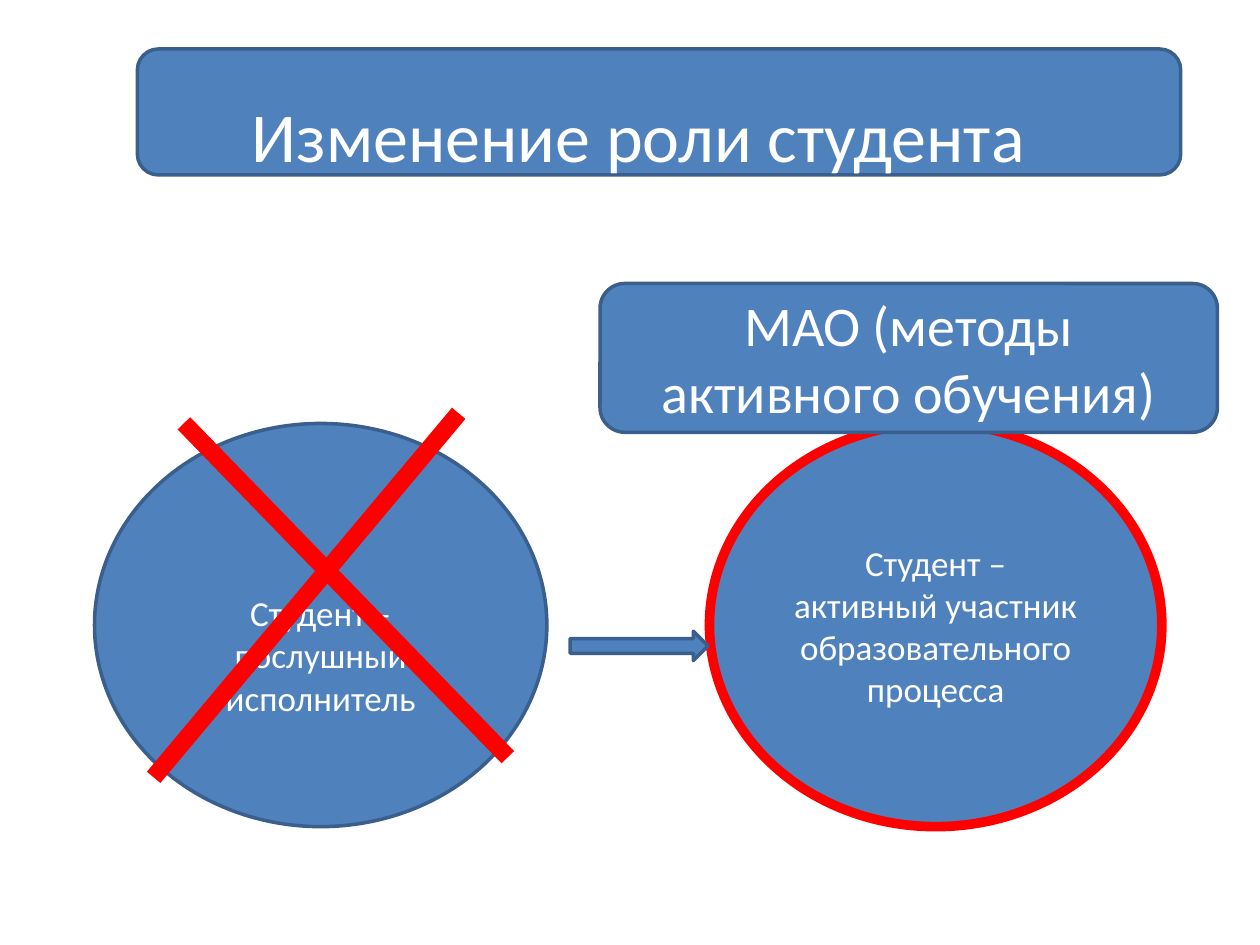
import pptx
import pptx.dml.color
import pptx.enum.shapes
import pptx.enum.text
import pptx.oxml.ns
import pptx.util
from lxml import etree

Pt = pptx.util.Pt
SHAPES = pptx.enum.shapes.MSO_SHAPE
BLUE = pptx.dml.color.RGBColor(0x4F, 0x81, 0xBD)
DARK_BLUE = pptx.dml.color.RGBColor(0x3A, 0x5F, 0x8C)
RED = pptx.dml.color.RGBColor(0xFF, 0x00, 0x00)
WHITE = pptx.dml.color.RGBColor(0xFF, 0xFF, 0xFF)


def write_text(shape, text, size):
    frame = shape.text_frame
    frame.text = text
    frame.word_wrap = True
    frame.vertical_anchor = pptx.enum.text.MSO_ANCHOR.MIDDLE
    paragraph = frame.paragraphs[0]
    paragraph.alignment = pptx.enum.text.PP_ALIGN.CENTER
    for run in paragraph.runs:
        for name, value in {"name": "Calibri", "size": Pt(size)}.items():
            setattr(run.font, name, value)
        run.font.color.rgb = WHITE


def add_blue_shape(kind, box, line_color=DARK_BLUE, line_width=2):
    shape = slide.shapes.add_shape(kind, *[Pt(length) for length in box])
    shape.shadow.inherit = False
    shape.fill.solid()
    shape.fill.fore_color.rgb = BLUE
    shape.line.color.rgb = line_color
    shape.line.width = Pt(line_width)
    return shape


presentation = pptx.Presentation()
presentation.slide_width = Pt(720)
presentation.slide_height = Pt(540)
slide = presentation.slides.add_slide(presentation.slide_layouts[5])

# Title on its bar; the bar goes behind the placeholder
title = slide.shapes.title
title_place = {"left": 36.7, "top": 31.7, "width": 656, "height": 90}
for name, value in title_place.items():
    setattr(title, name, Pt(value))
write_text(title, "Изменение роли студента", 40)
title_bar = add_blue_shape(SHAPES.ROUNDED_RECTANGLE, (78.5, 28, 596.2, 72))
title.element.addprevious(title_bar.element)

# New and old role of the student
active_student = add_blue_shape(SHAPES.OVAL, (405.4, 242, 258.5, 230.4), RED, 5.5)
write_text(active_student, "Студент –\vактивный участник образовательного процесса", 20)
obedient_student = add_blue_shape(SHAPES.OVAL, (54, 242, 258.5, 230.4))
write_text(obedient_student, "Студент – послушный исполнитель", 20)
obedient_student.text_frame.margin_top = Pt(37.8)

# Methods label
methods = add_blue_shape(SHAPES.ROUNDED_RECTANGLE, (342.9, 162, 352.8, 85))
write_text(methods, "МАО (методы активного обучения)", 32)

# Red cross over the old role
for ends in ((262.1, 236.2, 87.8, 444.2), (105.1, 241.9, 290.2, 432.7)):
    stroke = slide.shapes.add_connector(
        pptx.enum.shapes.MSO_CONNECTOR.STRAIGHT, *[Pt(length) for length in ends])
    stroke.line.color.rgb = RED
    stroke.line.width = Pt(10)
    etree.SubElement(stroke.element.spPr, pptx.oxml.ns.qn("a:effectLst"))

# Arrow from old role to new
add_blue_shape(SHAPES.RIGHT_ARROW, (325.8, 360.7, 78.8, 16.8))

presentation.save("out.pptx")
